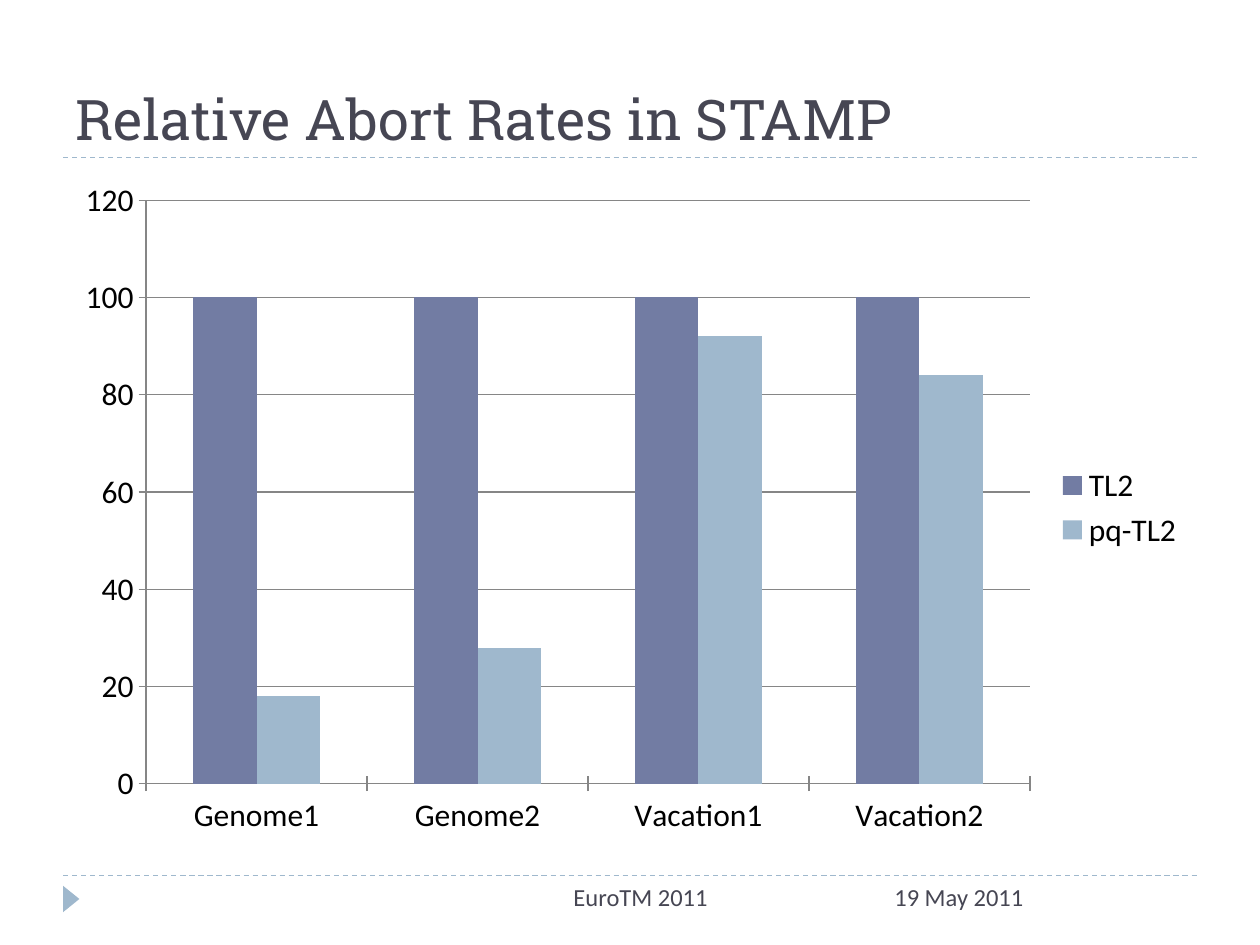
from lxml import etree
from pptx import Presentation
from pptx.chart.data import CategoryChartData
from pptx.dml.color import RGBColor
from pptx.enum.chart import XL_CHART_TYPE as ChartType, XL_LEGEND_POSITION as LegendPosition, XL_TICK_MARK as TickMark
from pptx.enum.dml import MSO_LINE as Dash
from pptx.enum.shapes import MSO_CONNECTOR as Connector, MSO_SHAPE as Shape
from pptx.enum.text import MSO_ANCHOR as Anchor, PP_ALIGN as Align
from pptx.oxml.ns import qn
from pptx.util import Inches, Pt

INK = RGBColor(0x46, 0x46, 0x53)
BLACK = RGBColor(0, 0, 0)
GRAY = RGBColor(0x86, 0x86, 0x86)
INDIGO = RGBColor(0x72, 0x7C, 0xA3)
SKY = RGBColor(0x9F, 0xB8, 0xCD)

prs = Presentation()
prs.slide_width, prs.slide_height = Inches(10), Inches(7.5)
slide = prs.slides.add_slide(prs.slide_layouts[6])


def add_text(text, left, top, width, height, size, font, align, anchor):
    box = slide.shapes.add_textbox(Inches(left), Inches(top), Inches(width), Inches(height))
    frame = box.text_frame
    frame.word_wrap = True
    frame.vertical_anchor = anchor
    paragraph = frame.paragraphs[0]
    paragraph.text = text
    paragraph.alignment = align
    paragraph.font.size = Pt(size)
    paragraph.font.name = font
    paragraph.font.color.rgb = INK


for y in (6.95, 1.25):
    divider = slide.shapes.add_connector(Connector.STRAIGHT, Inches(0.5), Inches(y), Inches(9.5), Inches(y))
    divider.line.color.rgb = SKY
    divider.line.width = Pt(0.75)
    divider.line.dash_style = Dash.DASH
    etree.SubElement(divider._element.spPr, qn("a:effectLst"))

footer_marker = slide.shapes.add_shape(Shape.ISOSCELES_TRIANGLE, Inches(0.46), Inches(7.07), Inches(0.21), Inches(0.13))
footer_marker.rotation = 90
footer_marker.shadow.inherit = False
footer_marker.fill.solid()
footer_marker.fill.fore_color.rgb = SKY
footer_marker.line.fill.background()

add_text("Relative Abort Rates in STAMP", 0.5, 0.17, 9, 1.08, 32, "Roboto Slab", Align.LEFT, Anchor.BOTTOM)
add_text("19 May 2011", 7, 6.95, 2.5, 0.4, 14, "Calibri", Align.LEFT, Anchor.TOP)
add_text("EuroTM 2011", 3.17, 6.95, 3.83, 0.4, 14, "Calibri", Align.CENTER, Anchor.TOP)

abort_rates = CategoryChartData()
abort_rates.categories = ["Genome1", "Genome2", "Vacation1", "Vacation2"]
abort_rates.add_series("TL2", (100, 100, 100, 100))
abort_rates.add_series("pq-TL2", (18, 28, 92, 84))
chart = slide.shapes.add_chart(
    ChartType.COLUMN_CLUSTERED, Inches(0.5), Inches(1.33), Inches(9), Inches(5.4), abort_rates
).chart
chart.has_title = False
chart.font.name = "Calibri"
chart.font.size = Pt(18)
chart.font.color.rgb = BLACK
chart.has_legend = True
chart.legend.position = LegendPosition.RIGHT
chart.legend.include_in_layout = False

columns = chart.plots[0]
columns.vary_by_categories = False
columns.gap_width = 150
columns.overlap = 0
for series, color in zip(columns.series, (INDIGO, SKY)):
    series.format.fill.solid()
    series.format.fill.fore_color.rgb = color

for axis in (chart.category_axis, chart.value_axis):
    axis.major_tick_mark = TickMark.CROSS
    axis.format.line.color.rgb = GRAY
chart.value_axis.minimum_scale = 0
chart.value_axis.maximum_scale = 120
chart.value_axis.major_unit = 20
chart.value_axis.has_major_gridlines = True
chart.value_axis.major_gridlines.format.line.color.rgb = GRAY

prs.save("out.pptx")
